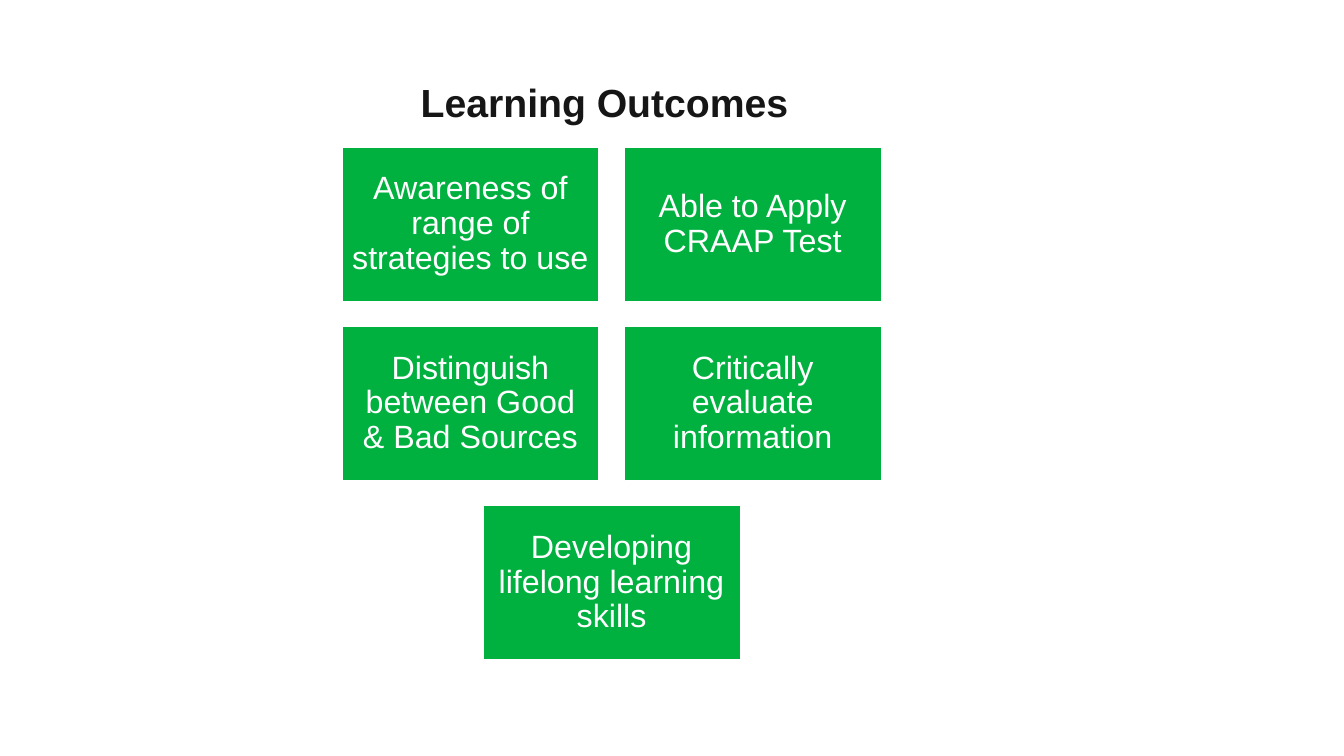
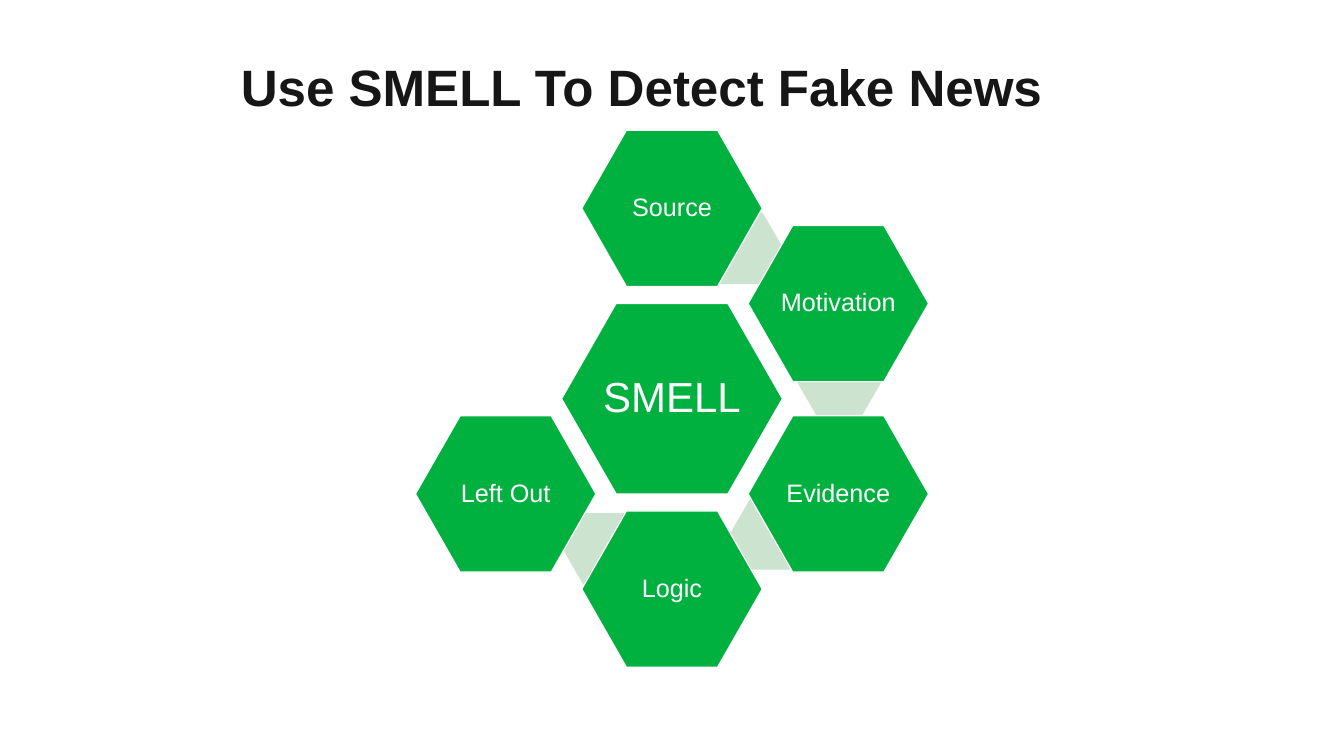
from dataclasses import dataclass

from pptx import Presentation
from pptx.dml.color import RGBColor
from pptx.enum.shapes import MSO_SHAPE as Shape
from pptx.enum.text import MSO_ANCHOR as Anchor, MSO_AUTO_SIZE as AutoSize, PP_ALIGN as Align
from pptx.util import Pt


@dataclass(frozen=True)
class Theme:
    font: str = "Arial"
    green: RGBColor = RGBColor(0x00, 0xB1, 0x40)
    pale: RGBColor = RGBColor(0xCC, 0xE4, 0xCF)
    white: RGBColor = RGBColor(0xFF, 0xFF, 0xFF)
    ink: RGBColor = RGBColor(0x17, 0x16, 0x16)
    outline: float = 0.85
    card_size: float = 23
    hub_size: float = 30
    petal_size: float = 18


THEME = Theme()

# Content: title text, type size and box (left, top, width, height)
OUTCOMES_TITLE = ("Learning Outcomes", 28, (291.8, 52.5, 280, 41))
SMELL_TITLE = ("Use SMELL To Detect Fake News", 36.5, (164.2, 36.7, 588, 49))

OUTCOME_ROWS = [
    ["Awareness of range of strategies to use", "Able to Apply CRAAP Test"],
    ["Distinguish between Good & Bad Sources", "Critically evaluate information"],
    ["Developing lifelong learning skills"],
]

# Each petal sits a number of (columns, rows) away from the hub
HUB = "SMELL"
PETALS = [
    ("Source", 0, -2),
    ("Motivation", 1, -1),
    ("Evidence", 1, 1),
    ("Logic", 0, 2),
    ("Left Out", -1, 1),
]
# Centres of the pale links between petals, measured from the hub
LINKS = [(49.7, -107.3), (119.5, -11.5), (71.3, 96.5), (-48.2, 107.3)]

# Geometry in points
CARD_WIDTH, CARD_HEIGHT, CARD_GAP = 183.6, 110, 18
CARDS_CENTRE, CARDS_TOP = 436.9, 105.1
HUB_X, HUB_Y = 480, 284.8
COLUMN_STEP, ROW_STEP = 118.8, 68
HUB_BOX, PETAL_BOX, LINK_BOX = (157.7, 136.1), (128.9, 111.6), (59.8, 51.1)


def write(frame, text, size, color, bold=False):
    """Fill a text frame with one centred run."""
    frame.vertical_anchor = Anchor.MIDDLE
    paragraph = frame.paragraphs[0]
    paragraph.alignment = Align.CENTER
    run = paragraph.add_run()
    run.text = text
    font = run.font
    font.name, font.size, font.bold = THEME.font, Pt(size), bold
    font.color.rgb = color
    return paragraph


def add_titled_slide(presentation, title):
    text, size, box = title
    slide = presentation.slides.add_slide(presentation.slide_layouts[5])
    shape = slide.shapes.title
    shape.left, shape.top, shape.width, shape.height = map(Pt, box)
    frame = shape.text_frame
    frame.auto_size = AutoSize.NONE
    frame.word_wrap = False
    write(frame, text, size, THEME.ink, bold=True)
    return slide


def add_block(slide, kind, box, fill, outlined=True):
    shape = slide.shapes.add_shape(kind, *map(Pt, box))
    shape.shadow.inherit = False
    shape.fill.solid()
    shape.fill.fore_color.rgb = fill
    if outlined:
        shape.line.color.rgb = THEME.white
        shape.line.width = Pt(THEME.outline)
    else:
        shape.line.fill.background()
    return shape


def label(shape, text, size, inset, wrap):
    frame = shape.text_frame
    frame.word_wrap = wrap
    frame.margin_left = frame.margin_right = Pt(inset)
    frame.margin_top = frame.margin_bottom = Pt(inset)
    write(frame, text, size, THEME.white).line_spacing = 0.9


def add_hexagon(slide, dx, dy, size, fill, adjustment, outlined=True):
    """Place a hexagon by its centre's offset from the hub."""
    width, height = size
    box = (HUB_X + dx - width / 2, HUB_Y + dy - height / 2, width, height)
    shape = add_block(slide, Shape.HEXAGON, box, fill, outlined)
    shape.adjustments[0] = adjustment
    return shape


def build_outcomes(presentation):
    slide = add_titled_slide(presentation, OUTCOMES_TITLE)
    # Each row of cards is centred on the same axis
    for row, texts in enumerate(OUTCOME_ROWS):
        row_width = len(texts) * (CARD_WIDTH + CARD_GAP) - CARD_GAP
        top = CARDS_TOP + row * (CARD_HEIGHT + CARD_GAP)
        for column, text in enumerate(texts):
            left = CARDS_CENTRE - row_width / 2 + column * (CARD_WIDTH + CARD_GAP)
            card = add_block(slide, Shape.RECTANGLE,
                             (left, top, CARD_WIDTH, CARD_HEIGHT), THEME.green)
            label(card, text, THEME.card_size, 7.2, wrap=True)


def build_smell(presentation):
    slide = add_titled_slide(presentation, SMELL_TITLE)
    # Links lie behind the petals
    for dx, dy in LINKS:
        add_hexagon(slide, dx, dy, LINK_BOX, THEME.pale, 0.289, outlined=False)
    # Hub and petals
    hub = add_hexagon(slide, 0, 0, HUB_BOX, THEME.green, 0.286)
    label(hub, HUB, THEME.hub_size, 3, wrap=False)
    for text, column, row in PETALS:
        petal = add_hexagon(slide, column * COLUMN_STEP, row * ROW_STEP,
                            PETAL_BOX, THEME.green, 0.286)
        label(petal, text, THEME.petal_size, 2, wrap=False)


def main():
    presentation = Presentation()
    presentation.slide_width, presentation.slide_height = Pt(960), Pt(540)
    build_outcomes(presentation)
    build_smell(presentation)
    presentation.save("out.pptx")


if __name__ == "__main__":
    main()
